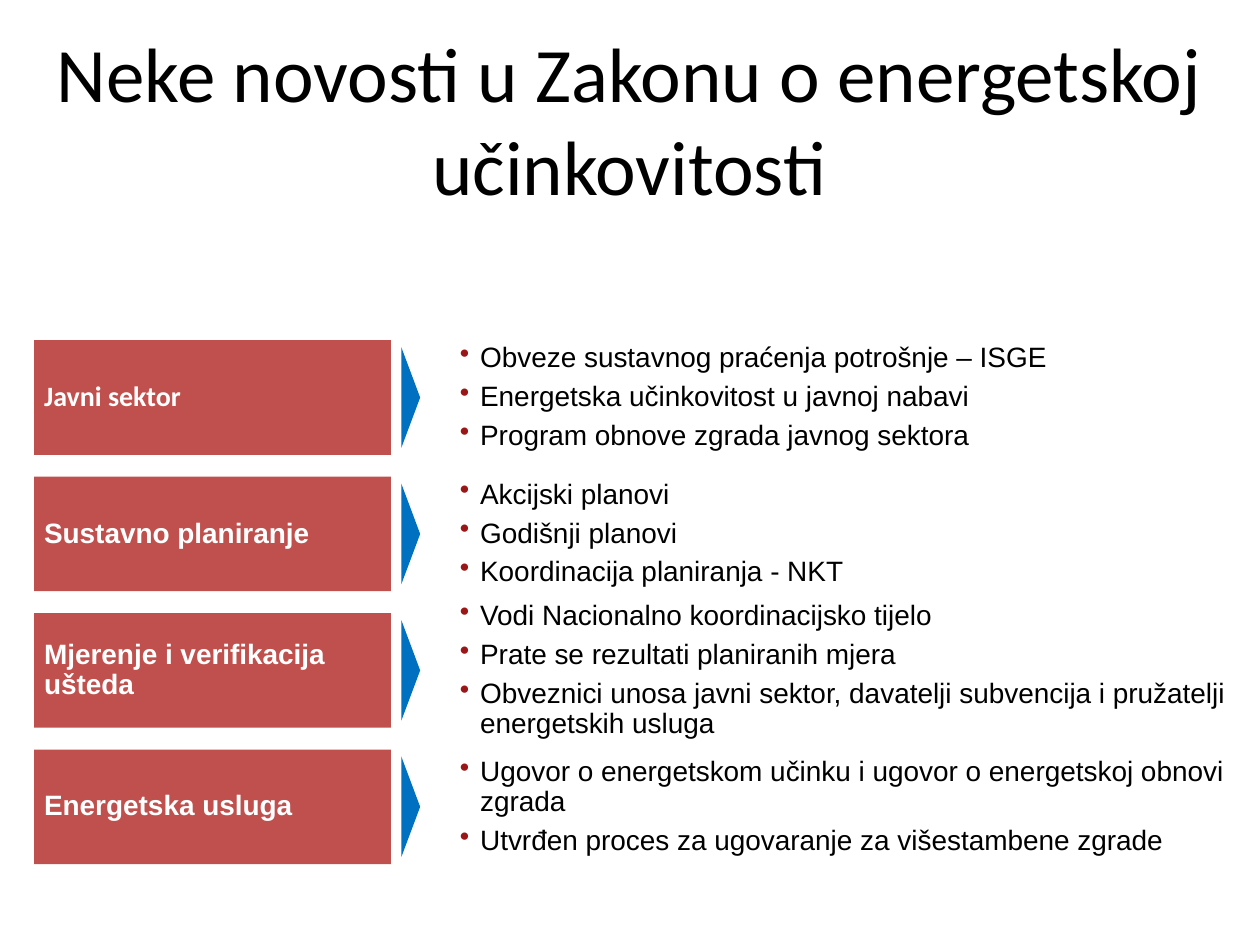
from lxml import etree
from pptx import Presentation
from pptx.dml.color import RGBColor
from pptx.enum import shapes, text
from pptx.oxml import ns
from pptx.util import Cm, Pt

TITLE = "Neke novosti u Zakonu o energetskoj učinkovitosti"
ROWS = [
    ("Javni sektor", "Calibri", [
        "Obveze sustavnog praćenja potrošnje – ISGE",
        "Energetska učinkovitost u javnoj nabavi",
        "Program obnove zgrada javnog sektora"]),
    ("Sustavno planiranje", "Arial", [
        "Akcijski planovi",
        "Godišnji planovi",
        "Koordinacija planiranja - NKT"]),
    ("Mjerenje i verifikacija ušteda", "Arial", [
        "Vodi Nacionalno koordinacijsko tijelo",
        "Prate se rezultati planiranih mjera",
        "Obveznici unosa javni sektor, davatelji subvencija i pružatelji "
        "energetskih usluga"]),
    ("Energetska usluga", "Arial", [
        "Ugovor o energetskom učinku i ugovor o energetskoj obnovi zgrada",
        "Utvrđen proces za ugovaranje za višestambene zgrade"]),
]
RED, BLUE, DOT, BLACK, WHITE = "C0504D", "0070C0", "9B1717", "000000", "FFFFFF"

LEFT, TOP, PITCH, HIGH = 0.69, 6.86, 2.75, 2.31
LABEL_W = 7.19
ARROW_X, ARROW_W, ARROW_H = 8.28, 2.03, 0.38
LIST_X, LIST_W = 9.27, 15.45


def color(code):
    return RGBColor.from_string(code)


def block(slide, kind, x, y, w, h, fill):
    shape = slide.shapes.add_shape(kind, Cm(x), Cm(y), Cm(w), Cm(h))
    shape.shadow.inherit = False
    shape.fill.solid()
    shape.fill.fore_color.rgb = color(fill)
    shape.line.fill.background()
    return shape


def set_frame(shape, pad_x, pad_y):
    frame = shape.text_frame
    frame.word_wrap = True
    frame.vertical_anchor = text.MSO_ANCHOR.MIDDLE
    frame.margin_left = frame.margin_right = Cm(pad_x)
    frame.margin_top = frame.margin_bottom = Cm(pad_y)
    return frame


def write(para, words, font, size, ink, bold=False, align=text.PP_ALIGN.LEFT):
    para.alignment = align
    run = para.add_run()
    run.text = words
    run.font.name, run.font.size, run.font.bold = font, Pt(size), bold
    run.font.color.rgb = color(ink)


def bullet(para):
    props = para._p.get_or_add_pPr()
    props.set("marL", str(Cm(0.41)))
    props.set("indent", str(-Cm(0.41)))
    tint = etree.SubElement(props, ns.qn("a:buClr"))
    etree.SubElement(tint, ns.qn("a:srgbClr"), val=DOT)
    etree.SubElement(props, ns.qn("a:buChar"), char="•")


def add_row(slide, y, label, font, items):
    box = block(slide, shapes.MSO_SHAPE.RECTANGLE, LEFT, y, LABEL_W, HIGH, RED)
    para = set_frame(box, 0.2, 0.2).paragraphs[0]
    para.line_spacing = 0.9
    write(para, label, font, 16, WHITE, bold=True)

    arrow = block(slide, shapes.MSO_SHAPE.ISOSCELES_TRIANGLE,
                  ARROW_X - ARROW_W / 2, y + (HIGH - ARROW_H) / 2,
                  ARROW_W, ARROW_H, BLUE)
    arrow.rotation = 90

    notes = slide.shapes.add_textbox(Cm(LIST_X), Cm(y), Cm(LIST_W), Cm(HIGH))
    frame = set_frame(notes, 0, 0)
    for n, item in enumerate(items):
        para = frame.add_paragraph() if n else frame.paragraphs[0]
        para.line_spacing = 0.9
        para.space_before = Pt(5)
        bullet(para)
        write(para, item, "Arial", 16, BLACK)


def main():
    deck = Presentation()
    deck.slide_width, deck.slide_height = Cm(25.4), Cm(19.05)
    slide = deck.slides.add_slide(deck.slide_layouts[6])
    head = slide.shapes.add_textbox(Cm(LEFT), Cm(1.93), Cm(24), Cm(0.91))
    write(set_frame(head, 0.25, 0.13).paragraphs[0], TITLE, "Calibri", 44,
          BLACK, align=text.PP_ALIGN.CENTER)
    for n, row in enumerate(ROWS):
        add_row(slide, TOP + n * PITCH, *row)
    deck.save("out.pptx")


if __name__ == "__main__":
    main()
